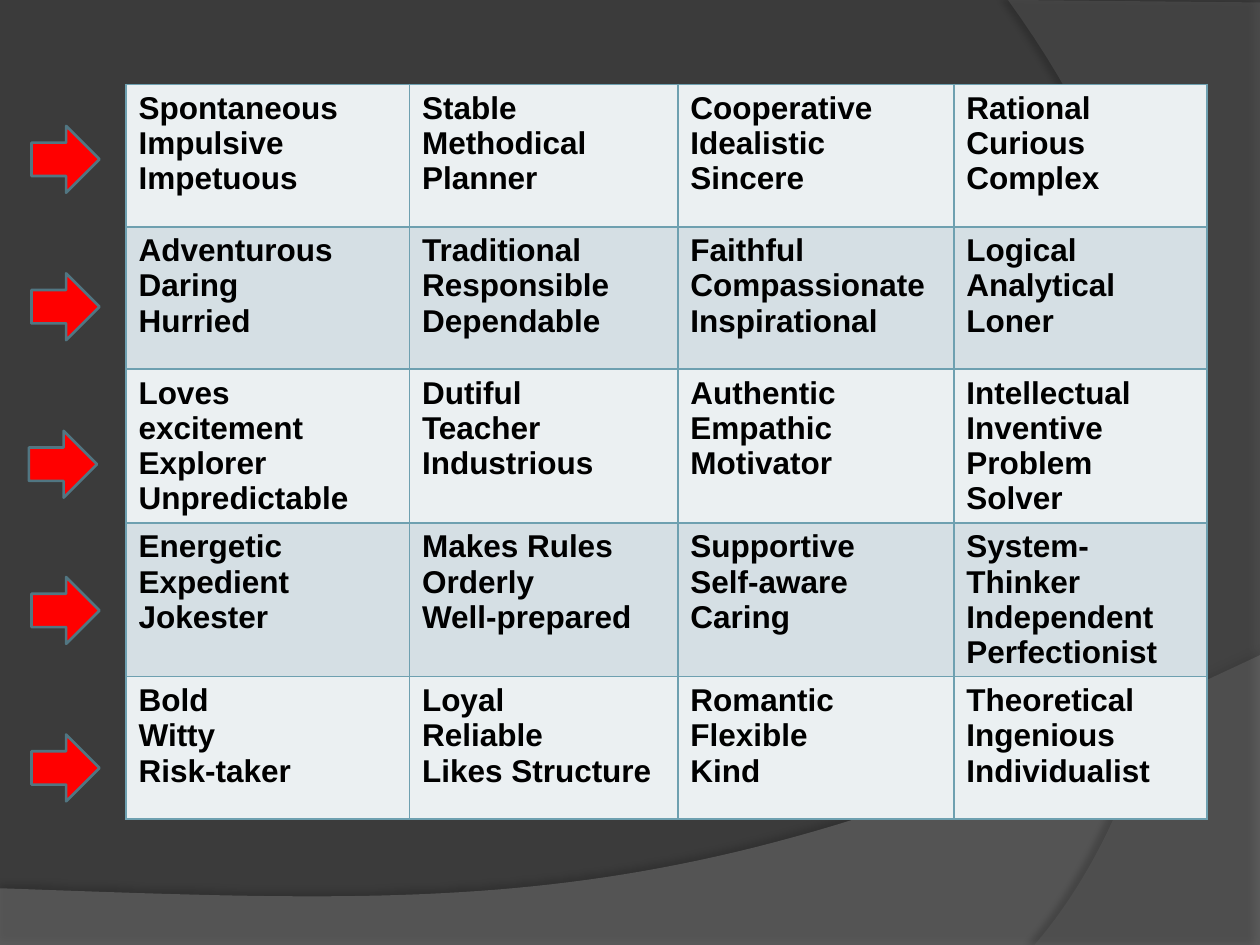
from lxml.etree import SubElement
from pptx import Presentation
from pptx.dml.color import RGBColor
from pptx.enum.shapes import MSO_SHAPE
from pptx.oxml.ns import qn
from pptx.util import Inches, Pt

COLORS = {
    "background": "3B3B3B", "band": "7F7F7F", "side": "5E5E5E", "shadow": "000000",
    "text": "000000", "border": "6EA0B0", "light_row": "EBF0F2", "dark_row": "D5DFE4",
    "arrow": "FF0000", "arrow_line": "517682",
}
TRAITS = [
    [["Spontaneous", "Impulsive Impetuous"], ["Stable", "Methodical", "Planner"],
     ["Cooperative", "Idealistic", "Sincere"], ["Rational", "Curious", "Complex"]],
    [["Adventurous", "Daring", "Hurried"], ["Traditional", "Responsible", "Dependable"],
     ["Faithful", "Compassionate", "Inspirational"], ["Logical", "Analytical", "Loner"]],
    [["Loves excitement", "Explorer Unpredictable"], ["Dutiful", "Teacher", "Industrious"],
     ["Authentic", "Empathic", "Motivator"], ["Intellectual", "Inventive", "Problem Solver"]],
    [["Energetic", "Expedient Jokester"], ["Makes Rules", "Orderly", "Well-prepared"],
     ["Supportive", "Self-aware", "Caring"],
     ["System-Thinker", "Independent", "Perfectionist"]],
    [["Bold", "Witty", "Risk-taker"], ["Loyal", "Reliable", "Likes Structure"],
     ["Romantic", "Flexible", "Kind"], ["Theoretical", "Ingenious", "Individualist"]],
]
COLUMN_WIDTHS = [2.25, 2.13, 2.19, 2.01]
ARROW_PLACES = [(0.25, 1), (0.25, 2.17), (0.23, 3.42), (0.25, 4.58), (0.25, 5.83)]


def color(name):
    """Return the named colour."""
    return RGBColor.from_string(COLORS[name])


def curve(start, control_1, control_2, end, steps=60):
    """Return points along a cubic curve."""
    points = []
    for step in range(steps + 1):
        t = step / steps
        weights = ((1 - t) ** 3, 3 * t * (1 - t) ** 2, 3 * t * t * (1 - t), t ** 3)
        points.append(tuple(
            sum(weight * value for weight, value in zip(weights, axis))
            for axis in zip(start, control_1, control_2, end)))
    return points


def add_swoosh(slide, points, fill, opacity, shadow_opacity, distance, direction):
    """Draw a translucent background outline with a soft shadow."""
    corners = [(Inches(x), Inches(y)) for x, y in points]
    builder = slide.shapes.build_freeform(*corners[0])
    builder.add_line_segments(corners[1:], close=True)
    swoosh = builder.convert_to_shape()
    swoosh.fill.solid()
    swoosh.fill.fore_color.rgb = color(fill)
    swoosh.line.fill.background()
    swoosh.shadow.inherit = False
    properties = swoosh._element.spPr
    fill_color = properties.find(qn("a:solidFill")).find(qn("a:srgbClr"))
    SubElement(fill_color, qn("a:alpha"), val=str(opacity * 1000))
    shadow = SubElement(
        properties.find(qn("a:effectLst")), qn("a:outerShdw"), blurRad=str(Pt(4)),
        dist=str(Pt(distance)), dir=str(direction * 60000), rotWithShape="0")
    shadow_color = SubElement(shadow, qn("a:srgbClr"), val=COLORS["shadow"])
    SubElement(shadow_color, qn("a:alpha"), val=str(shadow_opacity * 1000))


def add_background(slide):
    """Fill the slide and draw its two swooshes."""
    slide.background.fill.solid()
    slide.background.fill.fore_color.rgb = color("background")
    band = [(0, 7.5), (10, 7.5)] + curve((10, 5.2), (5.59, 7.29), (3.91, 7.19), (0, 7.05))
    side = [(10, 0.02), (10, 7.5)] + curve((8.21, 7.5), (9.35, 6.19), (10.18, 3), (8, 0))
    add_swoosh(slide, band, "band", 45, 35, 3.5, 270)
    add_swoosh(slide, side, "side", 40, 45, 4, 180)


def format_cell(cell, lines, fill):
    """Write the lines of a cell and set its borders, fill and font."""
    properties = cell._tc.get_or_add_tcPr()
    for side in ("lnL", "lnR", "lnT", "lnB"):
        border = SubElement(properties, qn(f"a:{side}"), w=str(Pt(1)))
        border_fill = SubElement(border, qn("a:solidFill"))
        SubElement(border_fill, qn("a:srgbClr"), val=COLORS["border"])
    cell.fill.solid()
    cell.fill.fore_color.rgb = color(fill)
    cell.text_frame.text = "\n".join(lines)
    for paragraph in cell.text_frame.paragraphs:
        font = paragraph.runs[0].font
        font.name, font.size, font.bold = "Arial", Pt(18), True
        font.color.rgb = color("text")


def add_traits_table(slide, left, top, width, height):
    """Build the table of personality traits in the given box."""
    traits = slide.shapes.add_table(
        len(TRAITS), len(COLUMN_WIDTHS), left, top, width, height).table
    traits.first_row = False
    for column, column_width in zip(traits.columns, COLUMN_WIDTHS):
        column.width = Inches(column_width)
    for row_index, row in enumerate(TRAITS):
        fill = "dark_row" if row_index % 2 else "light_row"
        for column_index, lines in enumerate(row):
            format_cell(traits.cell(row_index, column_index), lines, fill)


def add_row_arrow(slide, left, top, width, height):
    """Draw a red arrow pointing at a table row."""
    arrow = slide.shapes.add_shape(MSO_SHAPE.RIGHT_ARROW, left, top, width, height)
    arrow.shadow.inherit = False
    arrow.fill.solid()
    arrow.fill.fore_color.rgb = color("arrow")
    arrow.line.color.rgb = color("arrow_line")
    arrow.line.width = Pt(1.5)


def main():
    """Build and save the slide."""
    presentation = Presentation()
    presentation.slide_width, presentation.slide_height = Inches(10), Inches(7.5)
    slide = presentation.slides.add_slide(presentation.slide_layouts[6])
    add_background(slide)
    add_traits_table(slide, Inches(1), Inches(0.67),
                     Inches(sum(COLUMN_WIDTHS)), Inches(1.13 * len(TRAITS)))
    for left, top in ARROW_PLACES:
        add_row_arrow(slide, Inches(left), Inches(top), Inches(0.54), Inches(0.53))
    presentation.save("out.pptx")


if __name__ == "__main__":
    main()
